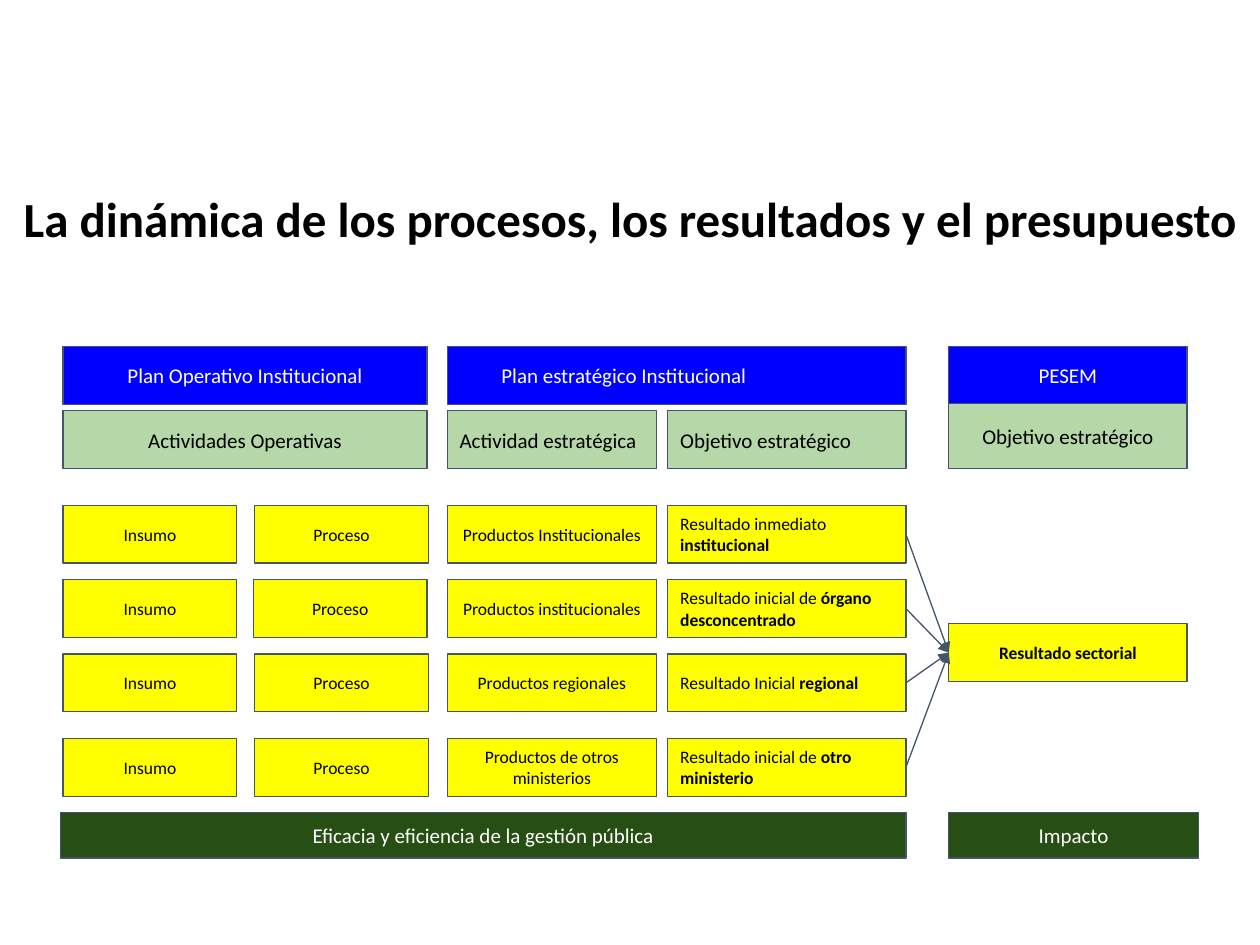
from lxml.etree import SubElement
from pptx import Presentation
from pptx.dml.color import RGBColor
from pptx.enum.shapes import MSO_CONNECTOR, MSO_SHAPE
from pptx.enum.text import MSO_ANCHOR, PP_ALIGN
from pptx.oxml.ns import qn
from pptx.util import Inches, Pt

BLUE = RGBColor(0x00, 0x00, 0xFF)
GREEN = RGBColor(0xB6, 0xD7, 0xA8)
FOREST = RGBColor(0x27, 0x4E, 0x13)
YELLOW = RGBColor(0xFF, 0xFF, 0x00)
SLATE = RGBColor(0x44, 0x54, 0x6A)
BLACK = RGBColor(0x00, 0x00, 0x00)
WHITE = RGBColor(0xFF, 0xFF, 0xFF)

FONT = "Calibri"
LEFT, CENTER = PP_ALIGN.LEFT, PP_ALIGN.CENTER
HIGH = 0.46
ROW_TOPS = (0, 0.59, 1.18, 1.85)

PRODUCTS = ("Productos Institucionales", "Productos institucionales",
            "Productos regionales", "Productos de otros ministerios")
RESULTS = (("Resultado inmediato ", "institucional"),
           ("Resultado inicial de ", "órgano desconcentrado"),
           ("Resultado Inicial", " regional"),
           ("Resultado inicial de ", "otro ministerio"))


def add_run(para, text, size, color, bold=False):
    run = para.add_run()
    run.text = text
    run.font.name = FONT
    run.font.size = Pt(size)
    run.font.color.rgb = color
    run.font.bold = bold


def add_box(slide, box, fill, text, bold="", size=12, color=BLACK,
            align=CENTER, inset=0.1):
    """Draw a filled rectangle holding a plain run, then a bold run."""
    shape = slide.shapes.add_shape(MSO_SHAPE.RECTANGLE, *map(Inches, box))
    shape.shadow.inherit = False
    shape.fill.solid()
    shape.fill.fore_color.rgb = fill
    shape.line.color.rgb = SLATE
    shape.line.width = Pt(0.75)
    frame = shape.text_frame
    frame.word_wrap = True
    frame.vertical_anchor = MSO_ANCHOR.MIDDLE
    frame.margin_left = Inches(inset)
    frame.margin_right = frame.margin_top = frame.margin_bottom = Inches(0.1)
    para = frame.paragraphs[0]
    para.alignment = align
    if text:
        add_run(para, text, size, color)
    if bold:
        add_run(para, bold, size, color, True)
    return shape


def add_arrow(slide, start, end):
    """Link the right side of start to the left side of end."""
    arrow = slide.shapes.add_connector(MSO_CONNECTOR.STRAIGHT, 0, 0, 0, 0)
    arrow.begin_connect(start, 3)
    arrow.end_connect(end, 1)
    arrow.line.color.rgb = SLATE
    arrow.line.width = Pt(0.75)
    SubElement(arrow.line._get_or_add_ln(), qn("a:tailEnd"), type="triangle")
    SubElement(arrow._element.spPr, qn("a:effectLst"))


def add_title(slide, box):
    shape = slide.shapes.add_textbox(*map(Inches, box))
    frame = shape.text_frame
    frame.word_wrap = True
    para = frame.paragraphs[0]
    para.alignment = CENTER
    add_run(para, "La dinámica de los procesos, los resultados y el presupuesto",
            28, BLACK, True)


def add_heads(slide, box):
    """Draw the plan names and, below them, what each plan holds."""
    x, y, wide, high = box
    low = y + high - HIGH
    plan, goal = x + 3.05, x + 4.8
    sector = x + wide - 1.89
    add_box(slide, (x, y, 2.89, HIGH), BLUE, "Plan Operativo Institucional",
            color=WHITE)
    add_box(slide, (plan, y, 3.64, HIGH), BLUE, "Plan estratégico Institucional",
            color=WHITE, align=LEFT, inset=0.43)
    add_box(slide, (sector, y, 1.89, HIGH), BLUE, "PESEM", color=WHITE)
    add_box(slide, (x, low, 2.89, HIGH), GREEN, "Actividades Operativas")
    add_box(slide, (plan, low, 1.66, HIGH), GREEN, "Actividad estratégica",
            align=LEFT)
    add_box(slide, (goal, low, 1.89, HIGH), GREEN, "Objetivo estratégico",
            align=LEFT)
    add_box(slide, (sector, y + 0.45, 1.89, high - 0.45), GREEN,
            "Objetivo estratégico")


def add_chain(slide, box):
    """Draw each row from input to result, all leading to the sector result."""
    x, y, wide, _ = box
    sector = add_box(slide, (x + wide - 1.89, y + 0.94, 1.89, HIGH), YELLOW,
                     "", "Resultado sectorial", size=10)
    for row, (drop, product, result) in enumerate(
            zip(ROW_TOPS, PRODUCTS, RESULTS)):
        top = y + drop
        step = 1.51 if row == 1 else 1.52
        for shift, width, text in ((0, 1.38, "Insumo"), (step, 1.38, "Proceso"),
                                   (3.05, 1.66, product)):
            add_box(slide, (x + shift, top, width, HIGH), YELLOW, text, size=10)
        goal = add_box(slide, (x + 4.8, top, 1.89, HIGH), YELLOW, *result,
                       size=10, align=LEFT)
        add_arrow(slide, goal, sector)


def add_foot(slide, box):
    x, y, wide, high = box
    add_box(slide, (x, y, 6.71, high), FOREST,
            "Eficacia y eficiencia de la gestión pública", color=WHITE)
    add_box(slide, (x + wide - 1.98, y, 1.98, high), FOREST, "Impacto",
            color=WHITE)


def main():
    deck = Presentation()
    deck.slide_width, deck.slide_height = Inches(10), Inches(7.5)
    slide = deck.slides.add_slide(deck.slide_layouts[6])
    add_heads(slide, (0.5, 2.75, 8.92, 0.97))
    add_chain(slide, (0.5, 4.01, 8.92, 2.31))
    add_foot(slide, (0.48, 6.45, 9.03, 0.36))
    add_title(slide, (0, 1.45, 10, 0.57))
    deck.save("out.pptx")


if __name__ == "__main__":
    main()
